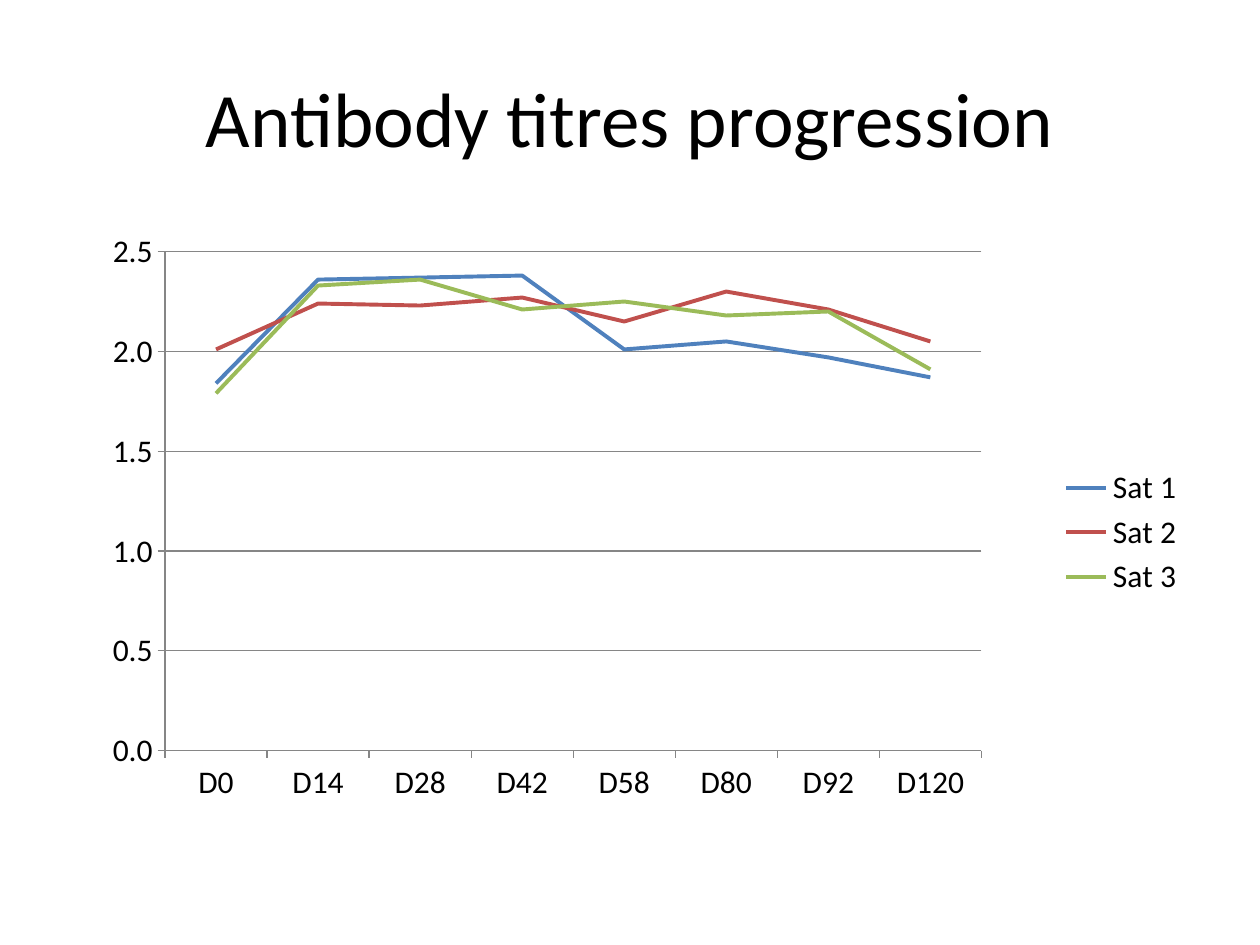
from dataclasses import dataclass

from lxml.etree import SubElement
from pptx import Presentation
from pptx.chart.data import CategoryChartData
from pptx.dml.color import RGBColor
from pptx.enum.chart import XL_CHART_TYPE as ChartType
from pptx.enum.chart import XL_LEGEND_POSITION as LegendPosition
from pptx.enum.chart import XL_TICK_MARK as TickMark
from pptx.enum.text import MSO_ANCHOR as Anchor
from pptx.enum.text import PP_ALIGN as Align
from pptx.oxml.ns import qn
from pptx.util import Inches, Pt


@dataclass(frozen=True)
class Theme:
    font: str = "Calibri"
    ink: RGBColor = RGBColor(0, 0, 0)
    grid: RGBColor = RGBColor(0x86, 0x86, 0x86)
    lines: tuple = ("4F81BD", "C0504D", "9BBB59")
    title_size: Pt = Pt(44)
    chart_size: Pt = Pt(18)
    line_width: Pt = Pt(2.25)
    grid_width: Pt = Pt(0.75)


THEME = Theme()
DAYS = ("D0", "D14", "D28", "D42", "D58", "D80", "D92", "D120")
TITRES = {
    "Sat 1": (1.84, 2.36, 2.37, 2.38, 2.01, 2.05, 1.97, 1.87),
    "Sat 2": (2.01, 2.24, 2.23, 2.27, 2.15, 2.3, 2.21, 2.05),
    "Sat 3": (1.79, 2.33, 2.36, 2.21, 2.25, 2.18, 2.2, 1.91),
}


def style_font(font, size):
    font.name = THEME.font
    font.size = size
    font.color.rgb = THEME.ink


def style_line(line, color, width):
    line.color.rgb = color
    line.width = width


def add_title(page, text):
    box = page.shapes.add_textbox(Inches(0.5), Inches(0.3), Inches(9), Inches(1.25))
    frame = box.text_frame
    frame.word_wrap = True
    frame.vertical_anchor = Anchor.MIDDLE
    para = frame.paragraphs[0]
    para.text = text
    para.alignment = Align.CENTER
    style_font(para.font, THEME.title_size)


def place_plot(chart, **bounds):
    area = chart._chartSpace.find(".//" + qn("c:plotArea"))
    for old in area.findall(qn("c:layout")):
        area.remove(old)
    layout = SubElement(area, qn("c:layout"))
    area.insert(0, layout)
    manual = SubElement(layout, qn("c:manualLayout"))
    settings = {"layoutTarget": "inner", "xMode": "edge", "yMode": "edge", **bounds}
    for name, value in settings.items():
        SubElement(manual, qn(f"c:{name}")).set("val", str(value))


def style_axis(axis):
    axis.major_tick_mark = TickMark.OUTSIDE
    axis.minor_tick_mark = TickMark.NONE
    style_font(axis.tick_labels.font, THEME.chart_size)
    style_line(axis.format.line, THEME.grid, THEME.grid_width)


def style_value_axis(axis):
    style_axis(axis)
    axis.minimum_scale = 0
    axis.maximum_scale = 2.5
    axis.major_unit = 0.5
    axis.has_major_gridlines = True
    style_line(axis.major_gridlines.format.line, THEME.grid, THEME.grid_width)
    axis.tick_labels.number_format = "0.0"
    axis.tick_labels.number_format_is_linked = False


def add_legend(chart):
    chart.has_legend = True
    chart.legend.position = LegendPosition.RIGHT
    chart.legend.include_in_layout = False
    style_font(chart.legend.font, THEME.chart_size)


def add_titre_chart(page):
    data = CategoryChartData()
    data.categories = DAYS
    for name, values in TITRES.items():
        data.add_series(name, values)
    chart = page.shapes.add_chart(
        ChartType.LINE, Inches(0.5), Inches(1.75), Inches(9), Inches(4.95), data
    ).chart
    chart.has_title = False
    style_font(chart.font, THEME.chart_size)
    style_axis(chart.category_axis)
    style_value_axis(chart.value_axis)
    add_legend(chart)
    place_plot(chart, x=0.09, y=0.05, w=0.72, h=0.8)
    plot = chart.plots[0]
    plot.vary_by_categories = False
    for series, color in zip(plot.series, THEME.lines):
        series.smooth = False
        style_line(series.format.line, RGBColor.from_string(color), THEME.line_width)


def main():
    deck = Presentation()
    deck.slide_width, deck.slide_height = Inches(10), Inches(7.5)
    page = deck.slides.add_slide(deck.slide_layouts[6])
    add_title(page, "Antibody titres progression")
    add_titre_chart(page)
    deck.save("out.pptx")


if __name__ == "__main__":
    main()
